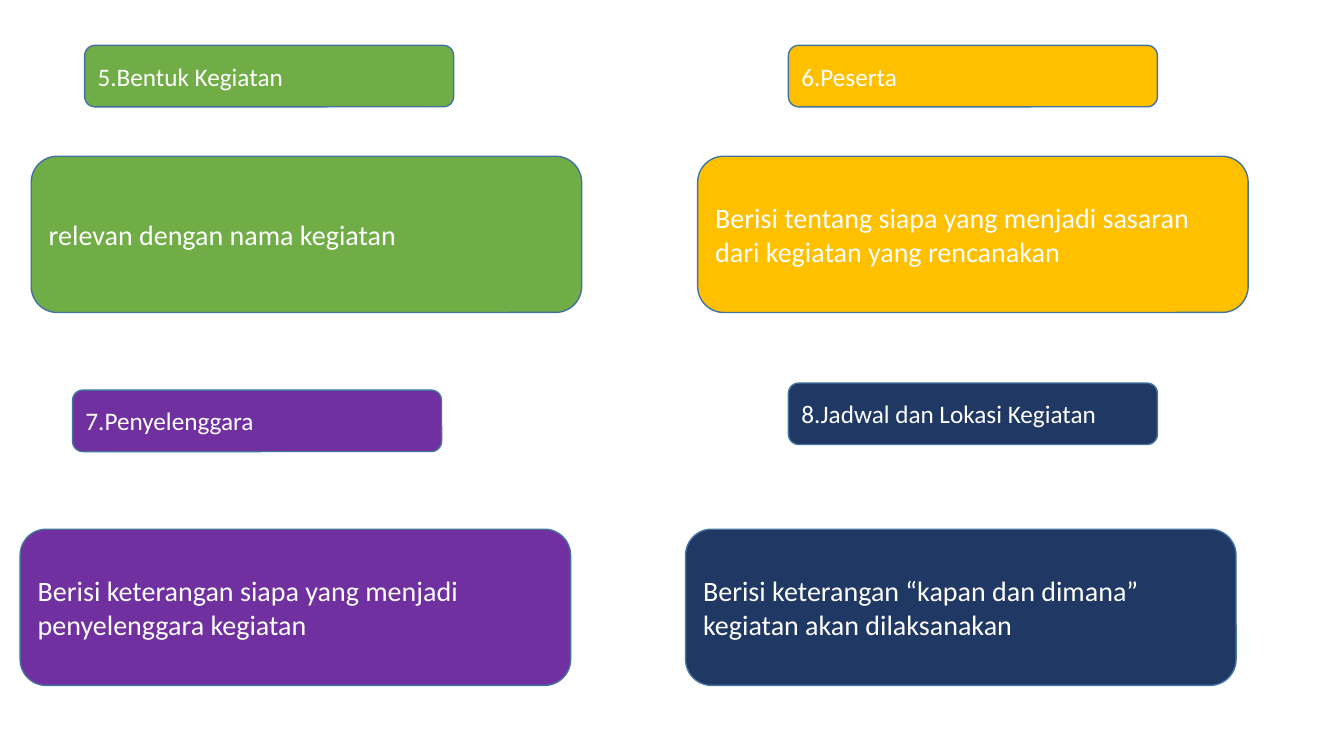
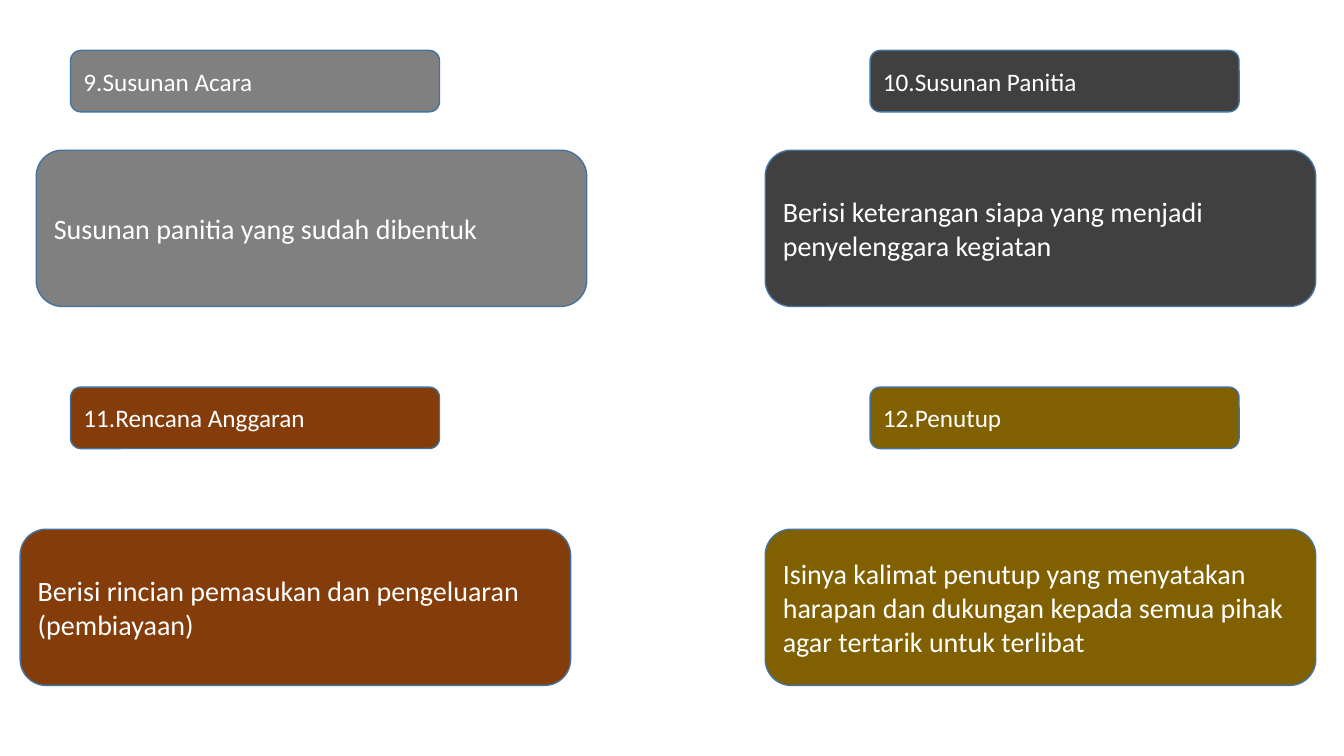
from dataclasses import dataclass

from pptx import Presentation
from pptx.dml.color import RGBColor
from pptx.enum.shapes import MSO_SHAPE as Shape
from pptx.enum.text import MSO_ANCHOR as Anchor, PP_ALIGN as Align
from pptx.util import Inches, Pt

# Shared style
FONT = "Calibri"
WHITE = RGBColor(0xFF, 0xFF, 0xFF)
OUTLINE = RGBColor(0x43, 0x73, 0x9E)
GREEN = RGBColor(0x70, 0xAD, 0x47)
GOLD = RGBColor(0xFF, 0xC0, 0x00)
PURPLE = RGBColor(0x70, 0x30, 0xA0)
NAVY = RGBColor(0x20, 0x38, 0x64)
GRAY = RGBColor(0x80, 0x80, 0x80)
CHARCOAL = RGBColor(0x40, 0x40, 0x40)
BROWN = RGBColor(0x84, 0x3C, 0x0B)
OLIVE = RGBColor(0x80, 0x60, 0x00)

# Each page is a grid of two columns and two rows (inches)
PAGE_WIDTH, PAGE_HEIGHT = 13.33, 7.5
COLUMNS = 2
COLUMN, ROW = 6.67, PAGE_HEIGHT / 2
HEADING_SIZE = (3.66, 0.61)
BODY_SIZE = (5.46, 1.55)


@dataclass
class Section:
    """A heading and its body, with offsets from the corner of the grid cell."""
    heading: str
    body: str
    color: RGBColor
    heading_at: tuple
    body_at: tuple


PAGES = [
    [
        Section("5.Bentuk Kegiatan", "relevan dengan nama kegiatan",
                GREEN, (0.84, 0.45), (0.31, 1.55)),
        Section("6.Peserta",
                "Berisi tentang siapa yang menjadi sasaran dari kegiatan yang rencanakan",
                GOLD, (1.15, 0.45), (0.25, 1.55)),
        Section("7.Penyelenggara",
                "Berisi keterangan siapa yang menjadi penyelenggara kegiatan",
                PURPLE, (0.72, 0.12), (0.2, 1.5)),
        Section("8.Jadwal dan Lokasi Kegiatan",
                "Berisi keterangan “kapan dan dimana” kegiatan akan dilaksanakan",
                NAVY, (1.15, 0.05), (0.13, 1.5)),
    ],
    [
        Section("9.Susunan Acara", "Susunan panitia yang sudah dibentuk",
                GRAY, (0.7, 0.5), (0.36, 1.49)),
        Section("10.Susunan Panitia",
                "Berisi keterangan siapa yang menjadi penyelenggara kegiatan",
                CHARCOAL, (1.96, 0.5), (0.92, 1.49)),
        Section("11.Rencana Anggaran",
                "Berisi rincian pemasukan dan pengeluaran (pembiayaan)",
                BROWN, (0.7, 0.09), (0.2, 1.5)),
        Section("12.Penutup",
                "Isinya kalimat penutup yang menyatakan harapan dan dukungan "
                "kepada semua pihak agar tertarik untuk terlibat",
                OLIVE, (1.96, 0.09), (0.92, 1.5)),
    ],
]


def add_box(page, corner, offset, size, text, color, points):
    """Place a rounded box at an offset from the corner of its cell."""
    left, top = (start + shift for start, shift in zip(corner, offset))
    box = page.shapes.add_shape(Shape.ROUNDED_RECTANGLE, Inches(left), Inches(top),
                                *map(Inches, size))
    box.shadow.inherit = False
    box.fill.solid()
    box.fill.fore_color.rgb = color
    box.line.color.rgb = OUTLINE
    box.line.width = Pt(1)

    frame = box.text_frame
    frame.word_wrap = True
    frame.vertical_anchor = Anchor.MIDDLE
    para = frame.paragraphs[0]
    para.text = text
    para.alignment = Align.LEFT
    para.font.name = FONT
    para.font.size = Pt(points)
    para.font.color.rgb = WHITE


def add_section(page, section, corner):
    add_box(page, corner, section.heading_at, HEADING_SIZE,
            section.heading, section.color, 18)
    add_box(page, corner, section.body_at, BODY_SIZE,
            section.body, section.color, 20)


def add_page(deck, sections):
    page = deck.slides.add_slide(deck.slide_layouts[6])
    for index, section in enumerate(sections):
        row, column = divmod(index, COLUMNS)
        add_section(page, section, (column * COLUMN, row * ROW))


def main():
    deck = Presentation()
    deck.slide_width = Inches(PAGE_WIDTH)
    deck.slide_height = Inches(PAGE_HEIGHT)
    for sections in PAGES:
        add_page(deck, sections)
    deck.save("out.pptx")


if __name__ == "__main__":
    main()
